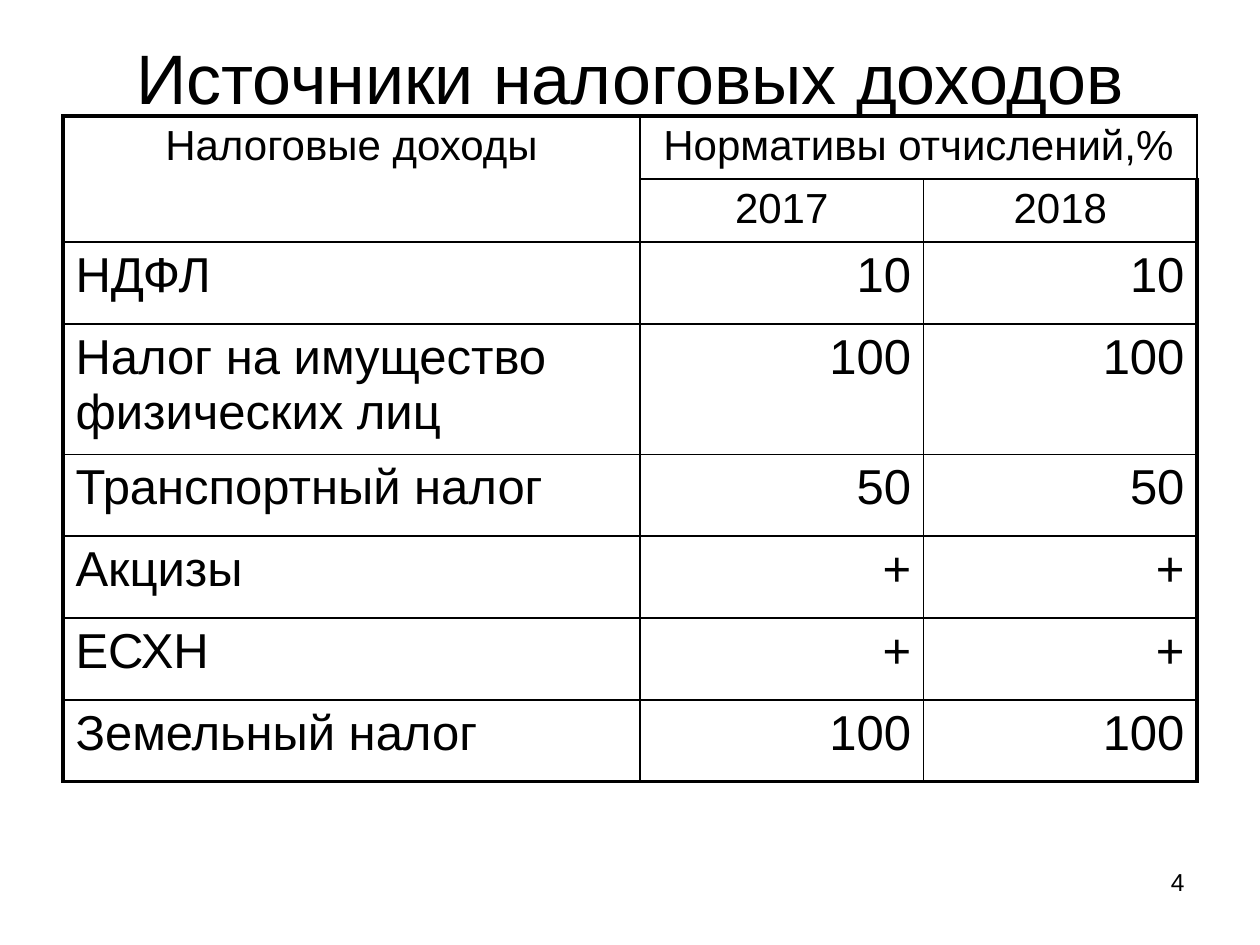
"""Build the slide that lists the sources of tax revenue."""
from dataclasses import dataclass

from lxml import etree
from pptx import Presentation
from pptx import util as u
from pptx.dml.color import RGBColor
from pptx.enum import text
from pptx.oxml.ns import qn

BLACK = "000000"
OUTER, INNER = 2.25, 1
LEFT, CENTER, RIGHT = text.PP_ALIGN.LEFT, text.PP_ALIGN.CENTER, text.PP_ALIGN.RIGHT
COLUMN_WIDTHS = (11.63, 5.72, 5.51)
HEADER_HEIGHTS = (1.27, 1.22)
ROW_HEIGHT, TALL_ROW_HEIGHT = 1.65, 2.59


@dataclass
class Label:
    words: str
    left: float
    top: float
    width: float
    height: float
    size: int
    align: text.PP_ALIGN
    anchor: text.MSO_ANCHOR


@dataclass
class Tax:
    name: str
    share_2017: str
    share_2018: str
    height: float = ROW_HEIGHT


LABELS = (
    Label("4", 18.21, 17.35, 5.92, 1.32, 14, RIGHT, text.MSO_ANCHOR.TOP),
    Label("Источники налоговых доходов", 1.27, 0.76, 22.86, 1.57, 40, CENTER,
          text.MSO_ANCHOR.MIDDLE),
)
TAXES = (
    Tax("НДФЛ", "10", "10"),
    Tax("Налог на имущество физических лиц", "100", "100", TALL_ROW_HEIGHT),
    Tax("Транспортный налог", "50", "50"),
    Tax("Акцизы", "+", "+"),
    Tax("ЕСХН", "+", "+"),
    Tax("Земельный налог", "100", "100"),
)


def color(value: str) -> RGBColor:
    return RGBColor.from_string(value)


def write(frame, words: str, size: int, align: text.PP_ALIGN) -> None:
    para = frame.paragraphs[0]
    para.alignment = align
    span = para.add_run()
    span.text = words
    for name, value in {"name": "Arial", "size": u.Pt(size)}.items():
        setattr(span.font, name, value)
    span.font.color.rgb = color(BLACK)


def add_label(page, label: Label) -> None:
    place = (label.left, label.top, label.width, label.height)
    box = page.shapes.add_textbox(*map(u.Cm, place))
    frame = box.text_frame
    for name, value in {"word_wrap": True, "vertical_anchor": label.anchor}.items():
        setattr(frame, name, value)
    write(frame, label.words, label.size, label.align)


def draw_borders(cell, widths: dict[str, float]) -> None:
    properties = cell._tc.get_or_add_tcPr()
    for side, width in widths.items():
        line = etree.SubElement(properties, qn(f"a:ln{side}"), w=str(u.Pt(width)))
        fill = etree.SubElement(line, qn("a:solidFill"))
        etree.SubElement(fill, qn("a:srgbClr"), val=BLACK)
    cell.fill.background()


def add_tax_table(page) -> None:
    heights = HEADER_HEIGHTS + tuple(tax.height for tax in TAXES)
    last_row, last_column = len(heights) - 1, len(COLUMN_WIDTHS) - 1
    place = (1.27, 2.34, sum(COLUMN_WIDTHS), sum(heights))
    table = page.shapes.add_table(
        len(heights), len(COLUMN_WIDTHS), *map(u.Cm, place)).table
    for name, value in {"first_row": False, "horz_banding": False}.items():
        setattr(table, name, value)
    for column, width in zip(table.columns, COLUMN_WIDTHS):
        column.width = u.Cm(width)
    for index, height in enumerate(heights):
        table.rows[index].height = u.Cm(height)
        for column in range(len(COLUMN_WIDTHS)):
            edges = {"L": column == 0, "R": column == last_column,
                     "T": index == 0, "B": index == last_row}
            draw_borders(table.cell(index, column), {
                side: OUTER if edge else INNER for side, edge in edges.items()})

    table.cell(0, 0).merge(table.cell(1, 0))
    table.cell(0, 1).merge(table.cell(0, 2))
    headers = {(0, 0): "Налоговые доходы", (0, 1): "Нормативы отчислений,%",
               (1, 1): "2017", (1, 2): "2018"}
    for position, words in headers.items():
        write(table.cell(*position).text_frame, words, 24, CENTER)
    for index, tax in enumerate(TAXES, start=len(HEADER_HEIGHTS)):
        for column, words in enumerate((tax.name, tax.share_2017, tax.share_2018)):
            write(table.cell(index, column).text_frame, words, 28,
                  RIGHT if column else LEFT)


def main() -> None:
    deck = Presentation()
    deck.slide_width, deck.slide_height = u.Cm(25.4), u.Cm(19.05)
    page = deck.slides.add_slide(deck.slide_layouts[6])
    for label in LABELS:
        add_label(page, label)
    add_tax_table(page)
    deck.save("out.pptx")


if __name__ == "__main__":
    main()
